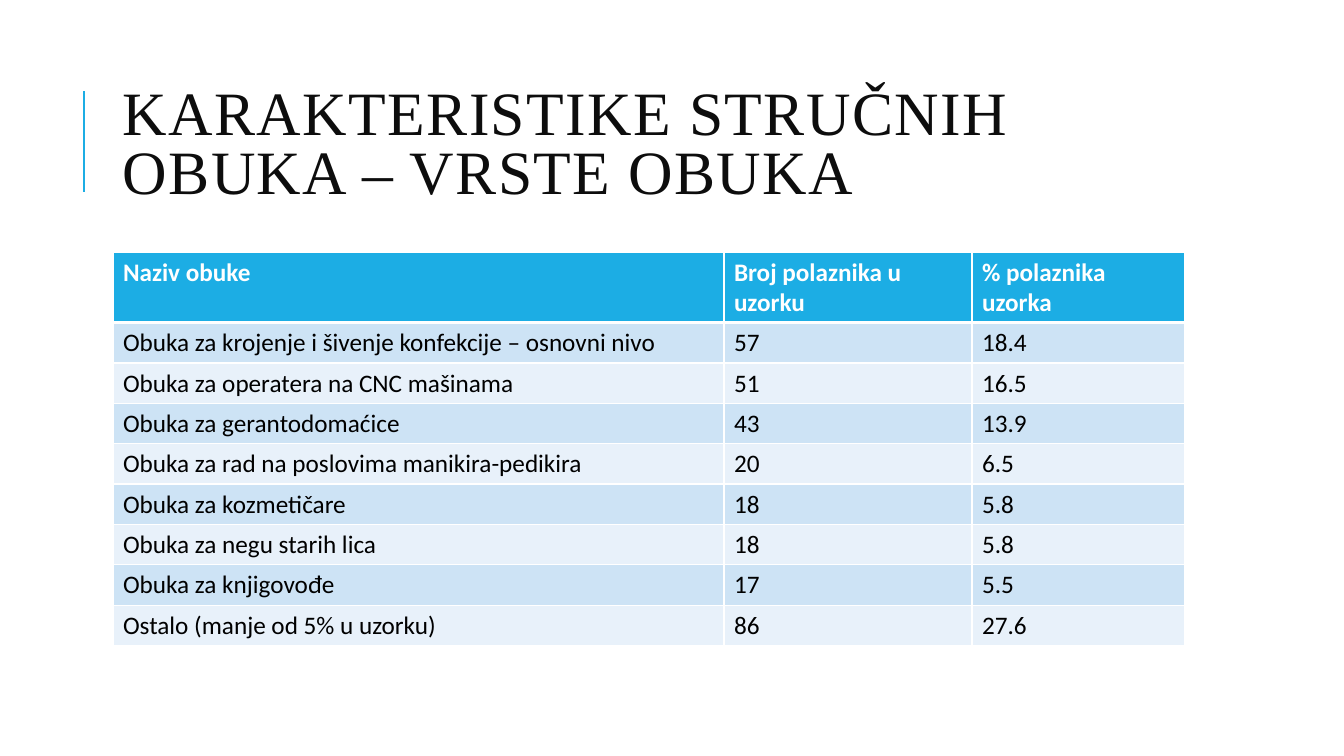
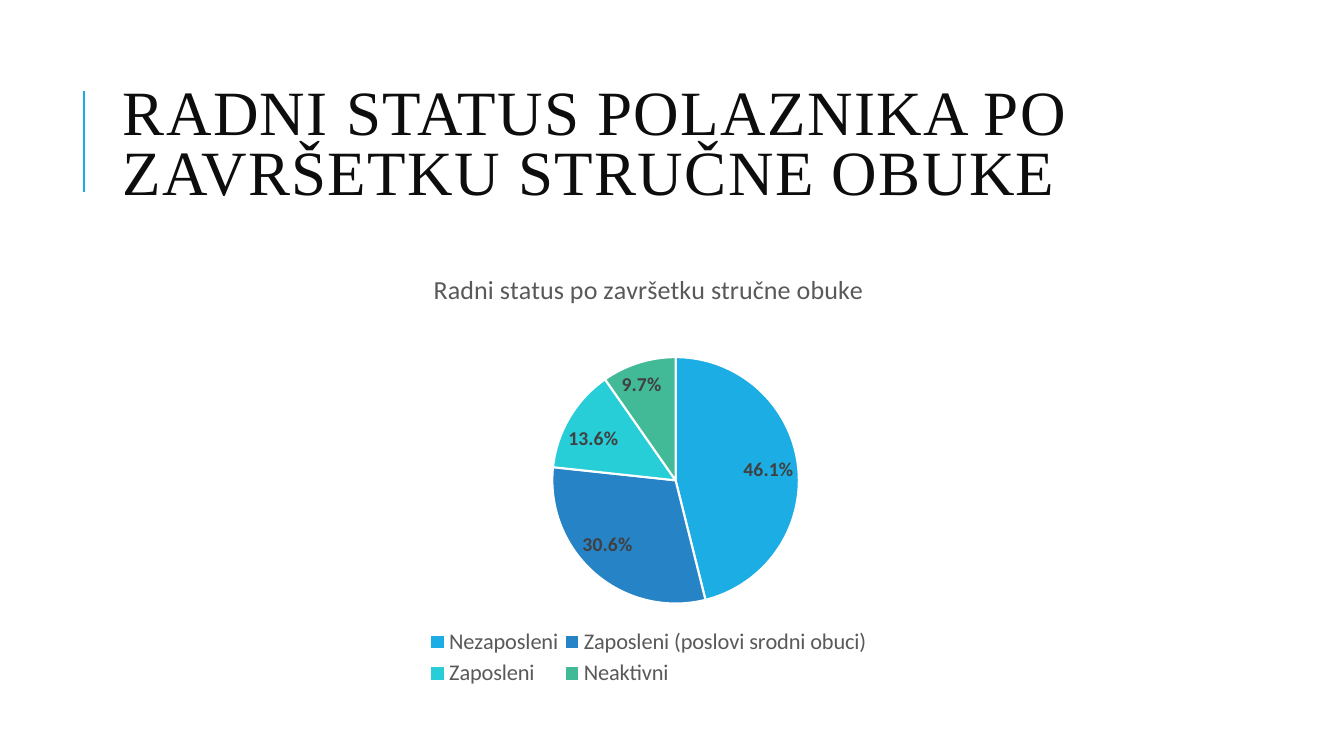
from lxml.etree import SubElement
from pptx import Presentation
from pptx.chart.data import CategoryChartData
from pptx.dml.color import RGBColor
from pptx.enum.chart import XL_CHART_TYPE, XL_LABEL_POSITION, XL_LEGEND_POSITION
from pptx.enum.shapes import MSO_CONNECTOR
from pptx.enum.text import MSO_ANCHOR
from pptx.oxml import parse_xml
from pptx.oxml.ns import nsdecls, qn
from pptx.util import Inches, Pt

HUES = {
    "sky": "1CADE4", "blue": "2683C6", "aqua": "27CED7", "green": "42BA97",
    "dark": "CDE3F5", "light": "E8F1FA", "white": "FFFFFF", "black": "000000",
    "ink": "0D0D0D", "gray": "595959", "label": "404040",
}
COLOR = {name: RGBColor.from_string(code) for name, code in HUES.items()}
LEFT, TOP, WIDTH = 1.12, 2.5, 10.63
HEAD = ["Naziv obuke", "Broj polaznika u uzorku", "% polaznika uzorka"]
ROWS = [
    ["Obuka za krojenje i šivenje konfekcije – osnovni nivo", "57", "18.4"],
    ["Obuka za operatera na CNC mašinama", "51", "16.5"],
    ["Obuka za gerantodomaćice", "43", "13.9"],
    ["Obuka za rad na poslovima manikira-pedikira", "20", "6.5"],
    ["Obuka za kozmetičare", "18", "5.8"],
    ["Obuka za negu starih lica", "18", "5.8"],
    ["Obuka za knjigovođe", "17", "5.5"],
    ["Ostalo (manje od 5% u uzorku)", "86", "27.6"],
]
PARTS = [
    ("Nezaposleni", 0.461, "sky"),
    ("Zaposleni (poslovi srodni obuci)", 0.306, "blue"),
    ("Zaposleni", 0.136, "aqua"),
    ("Neaktivni", 0.097, "green"),
]
TITLES = [
    ("KARAKTERISTIKE STRUČNIH OBUKA – VRSTE OBUKA", 44),
    ("RADNI STATUS POLAZNIKA PO ZAVRŠETKU STRUČNE OBUKE", 45),
]


def style(font, size, color, bold=False, face="Calibri"):
    font.name, font.size, font.bold = face, Pt(size), bold
    font.color.rgb = COLOR[color]


def write(frame, text, spacing=None, track=0, **look):
    """Fill a text frame; track is letter spacing in points."""
    line = frame.paragraphs[0]
    line.line_spacing = spacing
    run = line.add_run()
    run.text = text
    style(run.font, **look)
    if track:
        run.font._element.set("spc", str(track * 100))


deck = Presentation()
deck.slide_width, deck.slide_height = Inches(13.33), Inches(7.5)

# Shared title and accent line
slides = []
for title, size in TITLES:
    slide = deck.slides.add_slide(deck.slide_layouts[6])
    slides.append(slide)
    rule = slide.shapes.add_connector(
        MSO_CONNECTOR.STRAIGHT, Inches(0.83), Inches(1.9), Inches(0.83), Inches(0.9))
    rule.line.color.rgb = COLOR["sky"]
    rule.line.width = Pt(1.5)
    SubElement(rule._element.spPr, qn("a:effectLst"))
    box = slide.shapes.add_textbox(Inches(LEFT), Inches(0.64), Inches(WIDTH), Inches(1.64))
    box.text_frame.word_wrap = True
    box.text_frame.vertical_anchor = MSO_ANCHOR.MIDDLE
    write(box.text_frame, title, spacing=0.8, track=1,
          size=size, color="ink", face="Times New Roman")

# Training table
grid = slides[0].shapes.add_table(
    len(ROWS) + 1, len(HEAD), Inches(LEFT), Inches(TOP), Inches(WIDTH), Inches(3.9)).table
grid.horz_banding = False
for column, width in zip(grid.columns, [6.06, 2.46, 2.11]):
    column.width = Inches(width)
for i, texts in enumerate([HEAD] + ROWS):
    head = i == 0
    grid.rows[i].height = Inches(0.7 if head else 0.4)
    fill = "sky" if head else ("dark" if i % 2 else "light")
    for j, text in enumerate(texts):
        cell = grid.cell(i, j)
        write(cell.text_frame, text, size=18, bold=head,
              color="white" if head else "black")
        for side in "LRTB":
            thick = (i, side) in [(0, "B"), (1, "T")]
            edge = SubElement(cell._tc.get_or_add_tcPr(), qn(f"a:ln{side}"),
                              w=str(Pt(3 if thick else 1)))
            paint = SubElement(edge, qn("a:solidFill"))
            SubElement(paint, qn("a:srgbClr"), val=HUES["white"])
        cell.fill.solid()
        cell.fill.fore_color.rgb = COLOR[fill]

# Status pie
topic = "Radni status po završetku stručne obuke"
data = CategoryChartData(number_format="0.0%")
data.categories = [name for name, _, _ in PARTS]
data.add_series(topic, [share for _, share, _ in PARTS])
chart = slides[1].shapes.add_chart(
    XL_CHART_TYPE.PIE, Inches(LEFT), Inches(TOP), Inches(WIDTH), Inches(4.4), data).chart
style(chart.font, 10, "black")
chart.has_title = True
write(chart.chart_title.text_frame, topic, size=18.6, color="gray")
chart.chart_title.include_in_layout = False
chart.has_legend = True
legend = chart.legend
legend.position = XL_LEGEND_POSITION.BOTTOM
legend.include_in_layout = False
style(legend.font, 16, "gray")

plot = chart.plots[0]
plot.vary_by_categories = True
for i, (_, _, hue) in enumerate(PARTS):
    slice = plot.series[0].points[i].format
    slice.fill.solid()
    slice.fill.fore_color.rgb = COLOR[hue]
    slice.line.color.rgb = COLOR["white"]
    slice.line.width = Pt(1.5)
labels = plot.series[0].data_labels
labels.show_value = True
labels.number_format, labels.number_format_is_linked = "0.0%", False
labels.position = XL_LABEL_POSITION.BEST_FIT
style(labels.font, 14, "label", bold=True)

# Places of pie and legend, as shares of the chart: left, top, width, height
area = chart._chartSpace.chart.plotArea
for old in area.findall(qn("c:layout")):
    area.remove(old)
for owner, spot, inner in [
    (area, (0.41, 0.23, 0.23, 0.57), '<c:layoutTarget val="inner"/>'),
    (legend._element, (0.29, 0.84, 0.42, 0.15), ""),
]:
    modes = "".join(f'<c:{axis}Mode val="edge"/>' for axis in "xy")
    sizes = "".join(f'<c:{key} val="{val}"/>' for key, val in zip("xywh", spot))
    layout = parse_xml(f'<c:layout {nsdecls("c")}><c:manualLayout>'
                       f"{inner}{modes}{sizes}</c:manualLayout></c:layout>")
    owner.insert(0 if inner else 1, layout)

deck.save("out.pptx")
